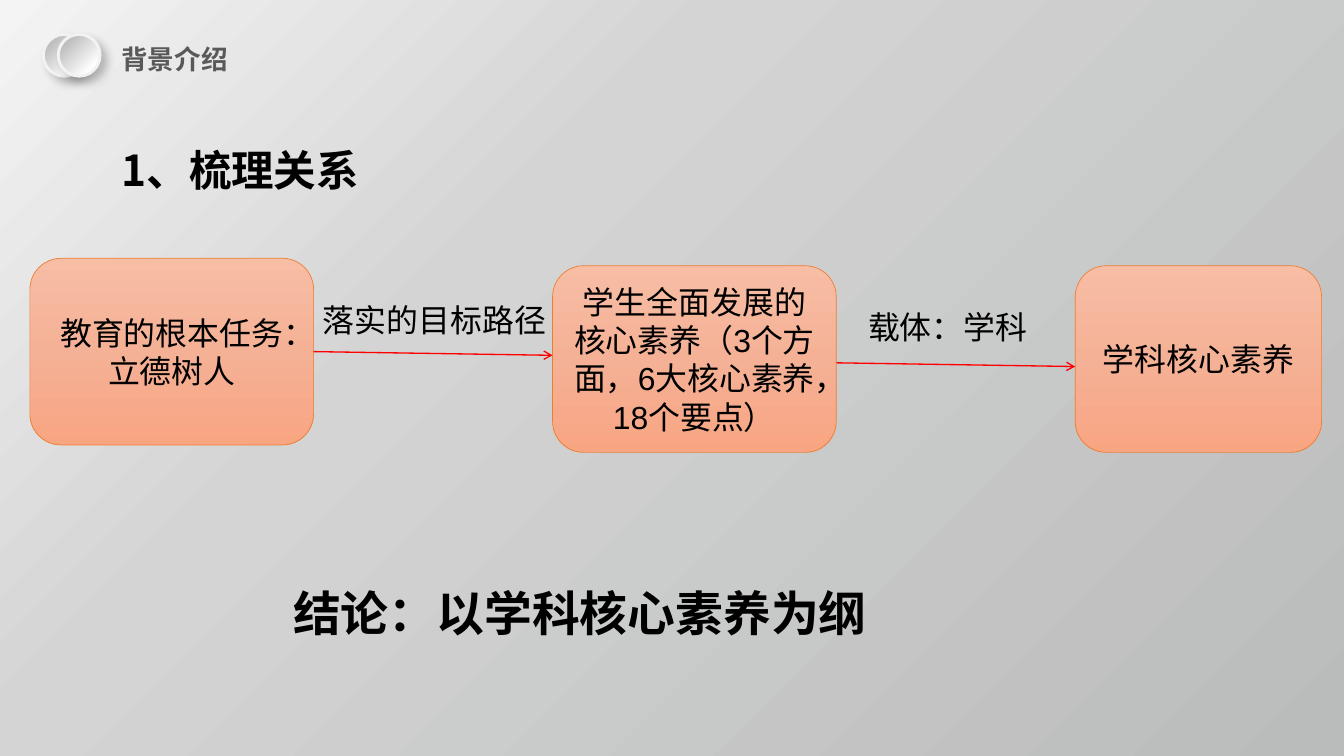
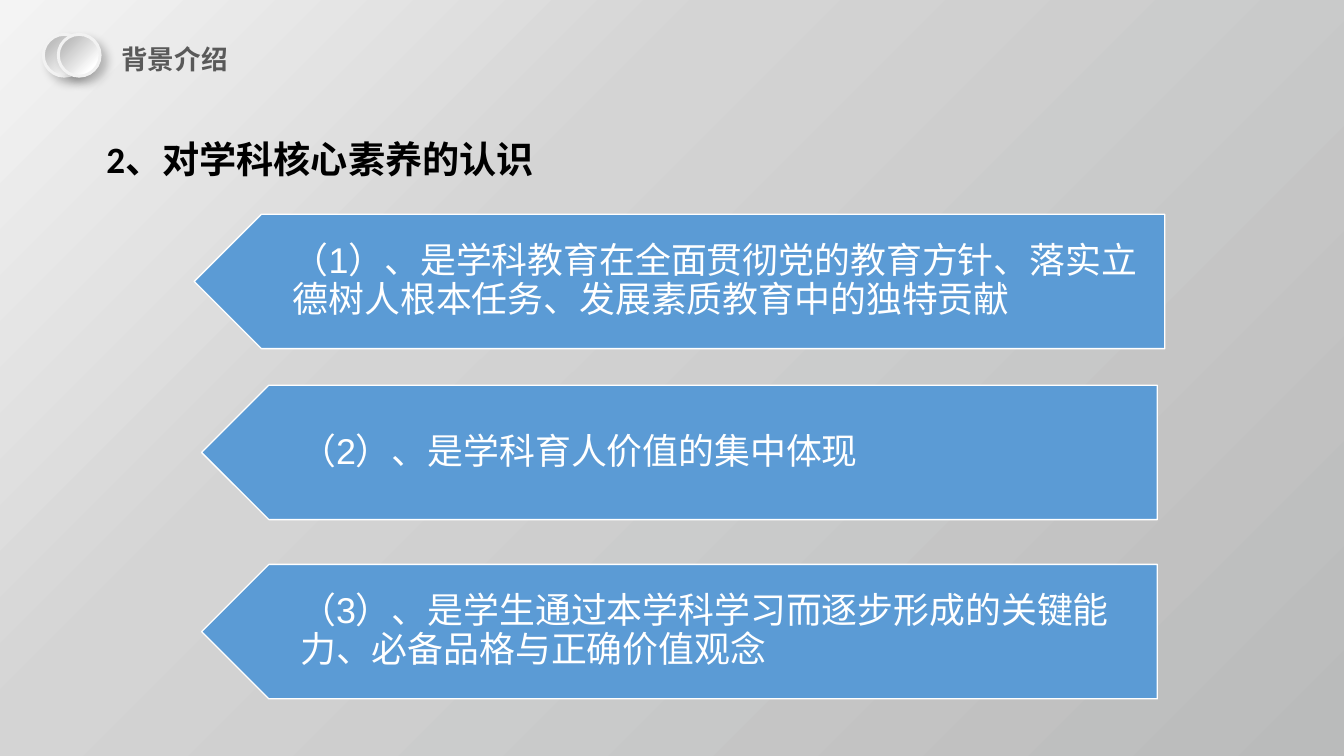
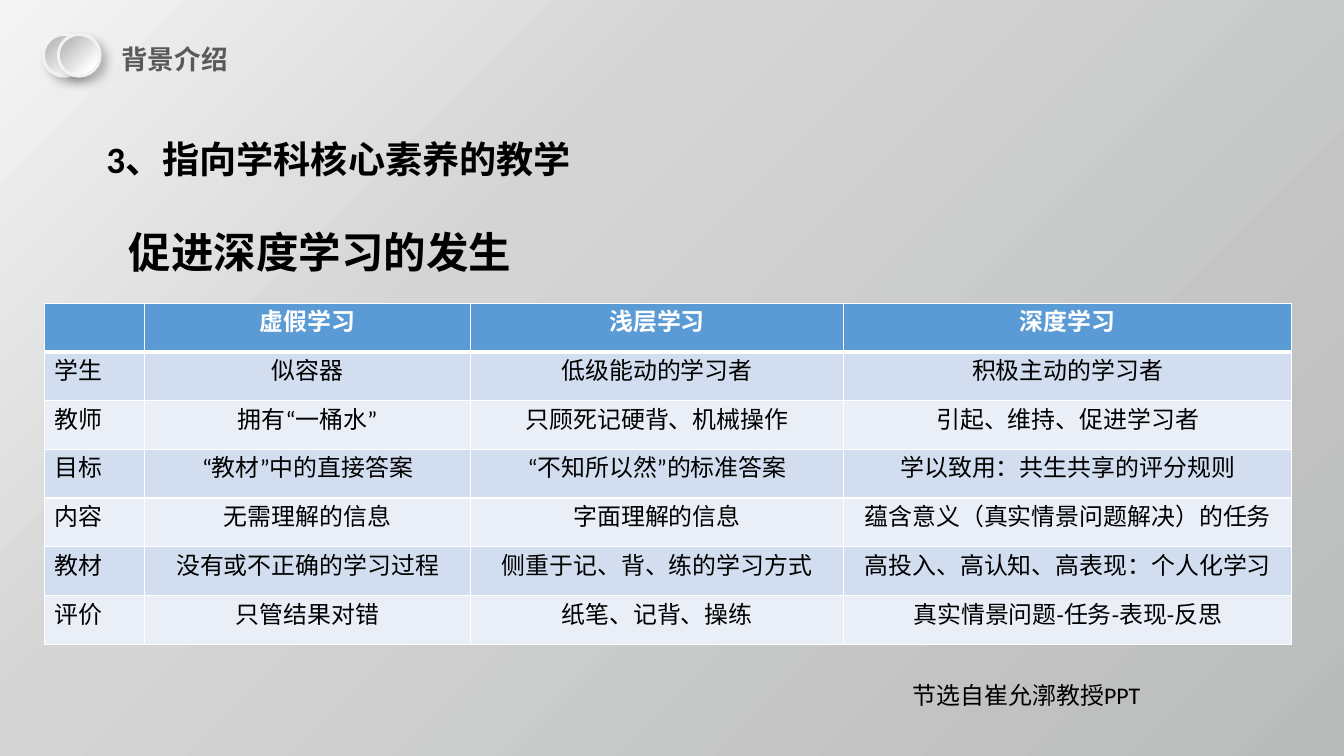
from lxml import etree
from pptx import Presentation
from pptx.dml.color import RGBColor
from pptx.enum.shapes import MSO_CONNECTOR, MSO_SHAPE
from pptx.enum.text import MSO_ANCHOR, MSO_AUTO_SIZE, PP_ALIGN
from pptx.oxml.ns import qn
from pptx.util import Inches, Pt

ELLIPSE, ROUNDED, PENTAGON = MSO_SHAPE.OVAL, MSO_SHAPE.ROUNDED_RECTANGLE, MSO_SHAPE.PENTAGON
STRAIGHT = MSO_CONNECTOR.STRAIGHT
LEFT, CENTER, JUSTIFY = PP_ALIGN.LEFT, PP_ALIGN.CENTER, PP_ALIGN.JUSTIFY
TOP, MIDDLE = MSO_ANCHOR.TOP, MSO_ANCHOR.MIDDLE
GROW, FIXED = MSO_AUTO_SIZE.SHAPE_TO_FIT_TEXT, MSO_AUTO_SIZE.NONE
RIGHT_SIDE = 3
COLUMNS = 180  # the grid is square: a row is as high as a column is wide


def color(value):
    return RGBColor.from_string(value)


def child(parent, tag, **attributes):
    return etree.SubElement(parent, qn(tag), {k: str(v) for k, v in attributes.items()})


class Deck:
    """Shared style, and the slide being built."""
    BODY, DISPLAY, BOX = "Calibri", "Noto Sans CJK SC", "Arial"
    BLACK, WHITE, GREY, RED = "000000", "FFFFFF", "595959", "FF0000"
    BLUE, ORANGE, RIM = "5B9BD5", "ED7D31", "F2F2F2"
    BANDS = ("D2DEEF", "EAEFF7")
    BACKDROP = ((0, "F4F4F4"), (35, "D4D4D4"), (100, "BABBBB"))
    PEARL = ((20, "BFBFBF"), (80, "FFFFFF"), (100, "FFFFFF"))
    PEACH = ((0, "F7BDA5"), (50, "F5B196"), (100, "F8A582"))

    def __init__(self):
        self.prs = Presentation()
        self.prs.slide_width, self.prs.slide_height = Inches(14.06), Inches(7.91)
        self.slide = None

    def grid(self, *cells):
        unit = self.prs.slide_width / COLUMNS
        return [round(cell * unit) for cell in cells]

    def new_slide(self, section):
        self.slide = self.prs.slides.add_slide(self.prs.slide_layouts[6])
        self.gradient(self.slide.background.fill, self.slide.element, self.BACKDROP, 45)
        self.text(section, (15, 5.1, 29, 5.6), 20, ink=self.GREY, bold=True, align=JUSTIFY)
        for left in (5.8, 7.8):
            self.pearl(left)

    def gradient(self, fill, owner, stops, angle):
        fill.gradient()
        fill.gradient_angle = 360 - angle
        stop_list = next(owner.iter(qn("a:gsLst")))
        for old in list(stop_list):
            stop_list.remove(old)
        for position, value in stops:
            child(child(stop_list, "a:gs", pos=position * 1000), "a:srgbClr", val=value)

    def shape(self, kind, at, fill, line, width, angle=90):
        shape = self.slide.shapes.add_shape(kind, *self.grid(*at))
        shape.shadow.inherit = False
        if isinstance(fill, str):
            shape.fill.solid()
            shape.fill.fore_color.rgb = color(fill)
        else:
            self.gradient(shape.fill, shape.element, fill, angle)
        shape.line.color.rgb = color(line)
        shape.line.width = Pt(width)
        return shape

    def pearl(self, left):
        pearl = self.shape(ELLIPSE, (left, 4.6, 5.6, 5.6), self.PEARL, self.RIM, 2.25, 45)
        effects = next(pearl.element.iter(qn("a:effectLst")))
        shadow = child(effects, "a:outerShdw", blurRad=Pt(7), dist=Pt(5.9),
                       dir=45 * 60000, algn="tl", rotWithShape=0)
        child(child(shadow, "a:srgbClr", val=self.BLACK), "a:alpha", val=23000)

    def set_words(self, frame, words, size, font=BODY, ink=BLACK, bold=False, align=LEFT):
        frame.text = words
        paragraph = frame.paragraphs[0]
        paragraph.alignment = align
        for run in paragraph.runs:
            run.font.name, run.font.size, run.font.bold = font, Pt(size), bold
            run.font.color.rgb = color(ink)
            child(run.font._element, "a:ea", typeface=self.BODY)

    def text(self, words, at, size, anchor=TOP, auto_size=GROW, **style):
        frame = self.slide.shapes.add_textbox(*self.grid(*at)).text_frame
        frame.word_wrap, frame.auto_size, frame.vertical_anchor = True, auto_size, anchor
        self.set_words(frame, words, size, **style)
        return frame

    def box(self, words, at):
        box = self.shape(ROUNDED, at, self.PEACH, self.ORANGE, 0.5)
        box.text_frame.word_wrap, box.text_frame.vertical_anchor = True, MIDDLE
        self.set_words(box.text_frame, words, 24, font=self.BOX, align=CENTER)
        return box

    def arrow(self, *ends):
        arrow = self.slide.shapes.add_connector(STRAIGHT, *self.grid(*ends))
        arrow.line.color.rgb, arrow.line.width = color(self.RED), Pt(1)
        child(arrow.line._get_or_add_ln(), "a:tailEnd", type="arrow")
        child(arrow.element.spPr, "a:effectLst")
        return arrow

    def banner(self, words, left, top, width):
        height, inset = 18, 4.9
        self.shape(PENTAGON, (left, top, width, height), self.BLUE, self.WHITE, 1).rotation = 180
        frame = self.text(words, (left + inset, top, width - inset, height), 27, anchor=MIDDLE,
                          auto_size=FIXED, font=self.BOX, ink=self.WHITE)
        frame.margin_left, frame.margin_right = self.grid(8.3, 2.7)
        frame.margin_top = frame.margin_bottom = Inches(0.11)
        frame.paragraphs[0].line_spacing = 0.9

    def table(self, rows, left, top, widths, row_height):
        at = self.grid(left, top, sum(widths), row_height * len(rows))
        table = self.slide.shapes.add_table(len(rows), len(widths), *at).table
        table.horz_banding = False
        for column, width in zip(table.columns, self.grid(*widths)):
            column.width = width
        for r, row in enumerate(rows):
            header = r == 0
            for c, words in enumerate(row):
                cell = table.cell(r, c)
                self.borders(cell, top=3 if r == 1 else 1, bottom=3 if header else 1)
                cell.fill.solid()
                cell.fill.fore_color.rgb = color(self.BLUE if header else self.BANDS[(r - 1) % 2])
                self.set_words(cell.text_frame, words, 18, bold=header,
                               ink=self.WHITE if header else self.BLACK,
                               align=CENTER if header or c else LEFT)

    def borders(self, cell, top, bottom):
        properties = cell._tc.get_or_add_tcPr()
        for side, width in (("L", 1), ("R", 1), ("T", top), ("B", bottom)):
            line = child(properties, f"a:ln{side}", w=Pt(width))
            child(child(line, "a:solidFill"), "a:srgbClr", val=self.WHITE)


def relations(deck):
    deck.new_slide("背景介绍")
    deck.text("1、梳理关系", (15, 18.6, 152, 8.2), 32, font=deck.DISPLAY, bold=True)
    # Chain of three boxes
    goal = deck.box("教育的根本任务：立德树人", (4, 34.6, 38, 25))
    deck.box("学生全面发展的核心素养（3个方面，6大核心素养，18个要点）", (74, 35.6, 38, 25))
    deck.box("学科核心素养", (144, 35.6, 33, 25))
    deck.arrow(42, 47.1, 74, 47.6).begin_connect(goal, RIGHT_SIDE)
    deck.arrow(112, 48.6, 144, 49.1)
    deck.text("落实的目标路径", (42, 39.7, 34, 6.4), 24)
    deck.text("载体：学科", (115, 40.6, 28, 6.4), 24)
    # Conclusion
    deck.text("结论：以学科核心素养为纲", (38, 77.6, 97, 9.1), 36, font=deck.DISPLAY, bold=True)


def understanding(deck):
    deck.new_slide("背景介绍")
    deck.text("2、对学科核心素养的认识", (13, 17.7, 137, 7.3), 28, bold=True)
    for words, left, top, width in (
        ("（1）、是学科教育在全面贯彻党的教育方针、落实立德树人根本任务、发展素质教育中的独特贡献",
         26, 28.7, 130),
        ("（2）、是学科育人价值的集中体现", 27, 51.6, 128),
        ("（3）、是学生通过本学科学习而逐步形成的关键能力、必备品格与正确价值观念", 27, 75.6, 128),
    ):
        deck.banner(words, left, top, width)


def teaching(deck):
    deck.new_slide("背景介绍")
    deck.text("3、指向学科核心素养的教学", (13, 17.7, 137, 7.3), 28, bold=True)
    deck.text("促进深度学习的发生", (16, 29.6, 76, 8.2), 32, font=deck.DISPLAY, bold=True)
    # Three kinds of learning compared
    deck.table((
        ("", "虚假学习", "浅层学习", "深度学习"),
        ("学生", "似容器", "低级能动的学习者", "积极主动的学习者"),
        ("教师", "拥有“一桶水”", "只顾死记硬背、机械操作", "引起、维持、促进学习者"),
        ("目标", "“教材”中的直接答案", "“不知所以然”的标准答案", "学以致用：共生共享的评分规则"),
        ("内容", "无需理解的信息", "字面理解的信息", "蕴含意义（真实情景问题解决）的任务"),
        ("教材", "没有或不正确的学习过程", "侧重于记、背、练的学习方式", "高投入、高认知、高表现：个人化学习"),
        ("评价", "只管结果对错", "纸笔、记背、操练", "真实情景问题-任务-表现-反思"),
    ), 6, 40.6, (13.4, 43.6, 50, 60), 6.53)
    deck.text("节选自崔允漷教授PPT", (121, 90.6, 56, 5.2), 18)


def main():
    deck = Deck()
    for build in (relations, understanding, teaching):
        build(deck)
    deck.prs.save("out.pptx")


if __name__ == "__main__":
    main()
